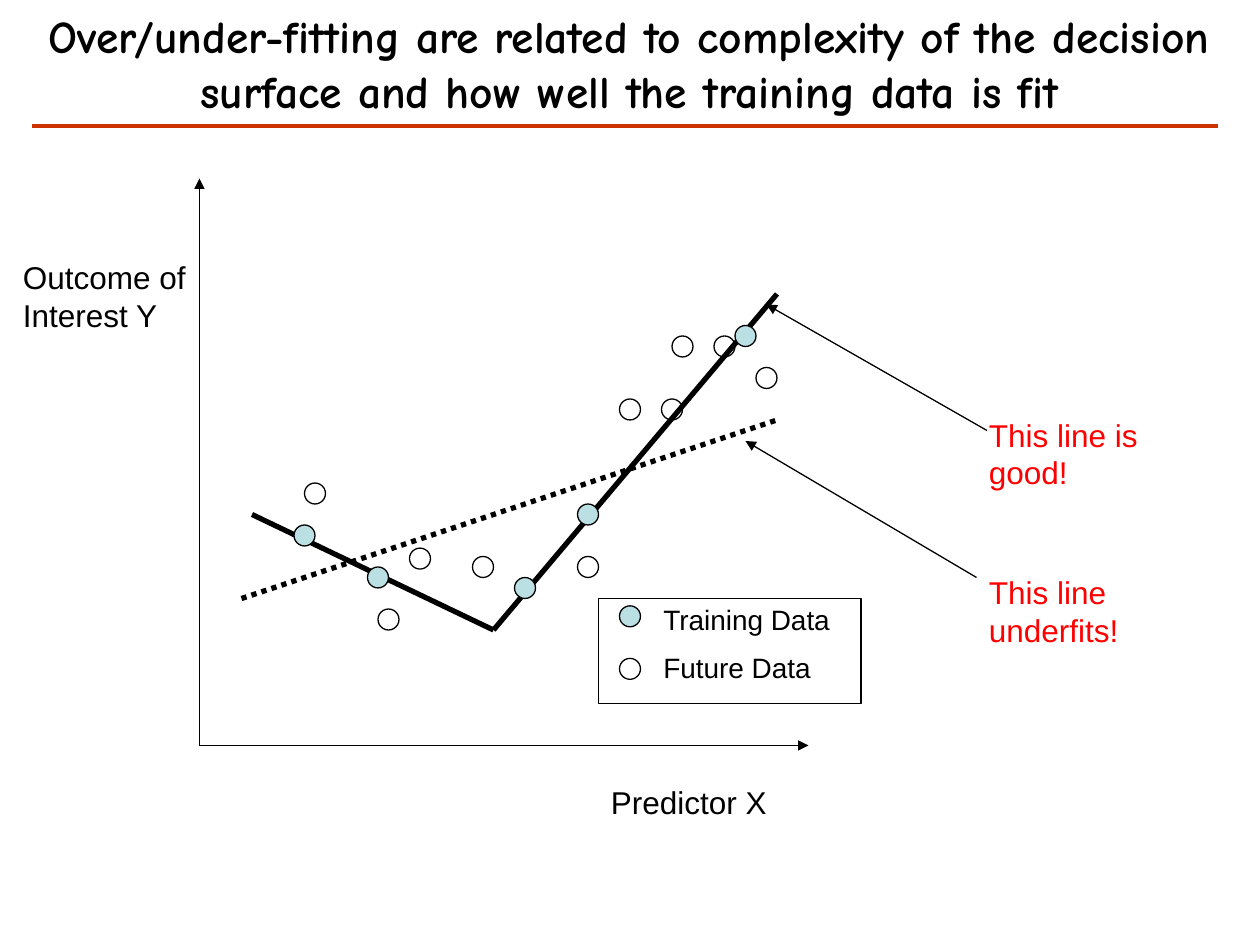
from pptx import Presentation
from pptx.dml.color import RGBColor
from pptx.enum.dml import MSO_LINE as Dash
from pptx.enum.shapes import MSO_CONNECTOR as Link, MSO_SHAPE as Kind
from pptx.enum.text import MSO_ANCHOR as Anchor, MSO_AUTO_SIZE as Fit, PP_ALIGN as Align
from pptx.oxml.ns import qn
from pptx.util import Cm, Pt
from lxml.etree import SubElement

BLACK, RED, RUST, TEAL = "000000", "FF0000", "CC3300", "BBE0E3"


def grid(*units):
    """Turn grid units, twelve to the inch, into lengths."""
    return [Cm(n * 2.54 / 12) for n in units]


def color(code):
    return RGBColor.from_string(code)


def write(frame, text, font="Arial", size=18, ink=BLACK, bold=False,
          align=Align.LEFT, anchor=Anchor.TOP, gap=0):
    """Fill a frame, one paragraph a line, with gap points between them."""
    frame.word_wrap = True
    frame.auto_size = Fit.NONE
    frame.vertical_anchor = anchor
    for i, line in enumerate(text.split("\n")):
        para = frame.paragraphs[0] if i == 0 else frame.add_paragraph()
        para.alignment = align
        para.line_spacing = 1.0
        para.space_before = Pt(gap if i else 0)
        run = para.add_run()
        run.text = line
        run.font.name, run.font.size = font, Pt(size)
        run.font.bold = bold
        run.font.color.rgb = color(ink)


class Board:
    thin, thick = 0.75, 3
    dot_size = 2

    def __init__(self, slide):
        self.slide = slide
        self.shapes = slide.shapes

    def title(self, text, box):
        head = self.shapes.title
        head.left, head.top, head.width, head.height = grid(*box)
        write(head.text_frame, text, font="Comic Neue", size=26, bold=True,
              align=Align.CENTER, anchor=Anchor.MIDDLE)

    def label(self, text, box, **style):
        write(self.shapes.add_textbox(*grid(*box)).text_frame, text, **style)

    def line(self, start, end, width=thin, ink=BLACK, dash=None, arrow=False):
        link = self.shapes.add_connector(Link.STRAIGHT, *grid(*start, *end))
        link.line.width = Pt(width)
        link.line.color.rgb = color(ink)
        if dash:
            link.line.dash_style = dash
        if arrow:
            SubElement(link.line._get_or_add_ln(), qn("a:tailEnd"), type="triangle")
        SubElement(link._element.spPr, qn("a:effectLst"))

    def shape(self, kind, box, fill=None):
        item = self.shapes.add_shape(kind, *grid(*box))
        item.shadow.inherit = False
        item.line.color.rgb = color(BLACK)
        item.line.width = Pt(self.thin)
        if fill:
            item.fill.solid()
            item.fill.fore_color.rgb = color(fill)
        else:
            item.fill.background()

    def dots(self, spots, fill=None):
        for x, y in spots:
            self.shape(Kind.OVAL, (x, y, self.dot_size, self.dot_size), fill)


def main():
    deck = Presentation()
    deck.slide_width, deck.slide_height = grid(120, 90)
    board = Board(deck.slides.add_slide(deck.slide_layouts[5]))

    board.title("Over/under-fitting are related to complexity of the decision "
                "surface and how well the training data is fit", (0, 0, 120, 12))
    board.line((3, 12), (116, 12), width=2.5, ink=RUST)

    # Axes
    origin = (19, 71)
    for tip in [(19, 17), (77, 71)]:
        board.line(origin, tip, arrow=True)
    board.label("Predictor X", (57, 74, 19, 4.8))
    board.label("Outcome of Interest Y", (1, 24, 19, 8.4))

    # Fitted lines and data
    bend = (47, 60)
    board.line((24, 49), bend, width=board.thick)
    board.line(bend, (74, 28), width=board.thick)
    board.dots([(28, 50), (35, 54), (49, 55), (55, 48), (70, 31)], TEAL)
    board.line((23, 57), (74, 40), width=board.thick, dash=Dash.ROUND_DOT)
    board.dots([(39, 52.2), (45, 53), (55, 53), (29, 46), (36, 58),
                (63, 38), (68, 32), (72, 35), (59, 38), (64, 32)])

    # Legend
    board.shape(Kind.RECTANGLE, (57, 57, 25, 10))
    board.dots([(59, 57.7)], TEAL)
    board.dots([(59, 62.7)])
    board.label("Training Data\nFuture Data", (62, 56.8, 25, 9.2), size=16, gap=8)

    # Remarks
    for text, top, start, end in [
        ("This line is good!", 39, (94, 41), (73, 29)),
        ("This line underfits!", 54, (93, 55), (71, 42)),
    ]:
        board.label(text, (93, top, 22, 8.4), ink=RED)
        board.line(start, end, arrow=True)

    deck.save("out.pptx")


if __name__ == "__main__":
    main()
